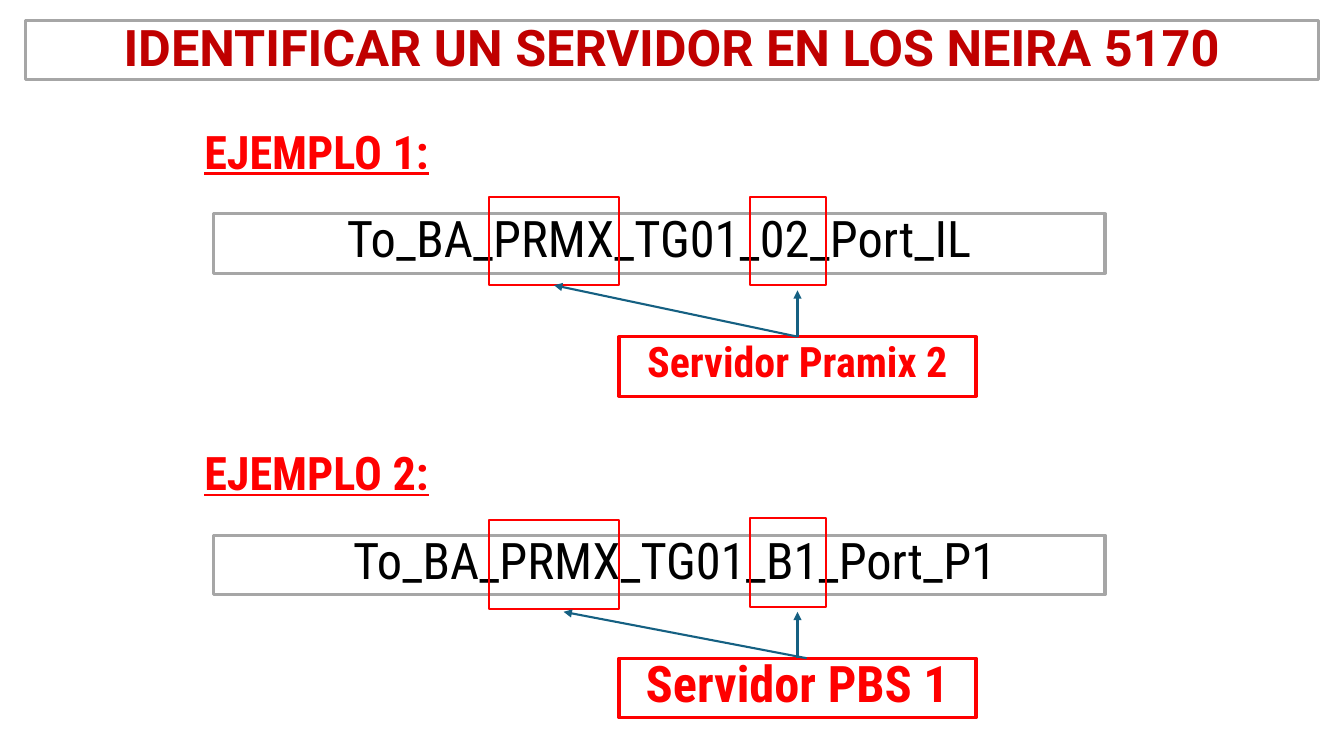
import pptx
import pptx.util
import pptx.dml.color
import pptx.enum.shapes
import pptx.enum.text
import pptx.oxml.ns
import lxml.etree

Inches = pptx.util.Inches
Pt = pptx.util.Pt
RGBColor = pptx.dml.color.RGBColor

WHITE = RGBColor(0xFF, 0xFF, 0xFF)
BLACK = RGBColor(0, 0, 0)
RED = RGBColor(0xFF, 0, 0)
DARK_RED = RGBColor(0xC0, 0, 0)
GRAY = RGBColor(0xA6, 0xA6, 0xA6)
BLUE = RGBColor(0x15, 0x60, 0x82)


def write_box(box, text, size, color, line_color=None, spacing=0.8,
              font="Roboto Condensed", bold=True):
    """Fill and outline a box and write one centred line of text in it."""
    box.fill.solid()
    box.fill.fore_color.rgb = WHITE
    if line_color is not None:
        box.line.color.rgb = line_color
        box.line.width = Pt(2.25)
    frame = box.text_frame
    frame.word_wrap = True
    frame.auto_size = pptx.enum.text.MSO_AUTO_SIZE.NONE
    frame.vertical_anchor = pptx.enum.text.MSO_ANCHOR.MIDDLE
    para = frame.paragraphs[0]
    para.text = text
    para.alignment = pptx.enum.text.PP_ALIGN.CENTER
    para.line_spacing = spacing
    para.font.name = font
    para.font.size = Pt(size)
    para.font.bold = bold
    para.font.color.rgb = color
    return para


def add_arrow(shapes, start, end):
    """Draw a blue arrow between two (x, y) points in inches."""
    arrow = shapes.add_connector(pptx.enum.shapes.MSO_CONNECTOR.STRAIGHT,
                                 *[Inches(value) for value in start + end])
    arrow.line.color.rgb = BLUE
    arrow.line.width = Pt(1.5)
    lxml.etree.SubElement(arrow.line._get_or_add_ln(),
                          pptx.oxml.ns.qn("a:tailEnd"), type="triangle")
    lxml.etree.SubElement(arrow._element.spPr, pptx.oxml.ns.qn("a:effectLst"))
    return arrow


deck = pptx.Presentation()
deck.slide_width = Inches(13.33)
deck.slide_height = Inches(7.5)
slide = deck.slides.add_slide(deck.slide_layouts[5])
shapes = slide.shapes

title = shapes.title
title.left, title.top = Inches(0.25), Inches(0.2)
title.width, title.height = Inches(12.83), Inches(0.59)
write_box(title, "IDENTIFICAR UN SERVIDOR EN LOS NEIRA 5170", 36, DARK_RED,
          GRAY, spacing=0.9, font="Roboto")

BOX_HEIGHT = 0.59
EXAMPLE_STEP = 3.19
LABEL_CENTER = 7.91
LABEL_WIDTH = 3.54

# Port name, its left inset, server label, label size and spacing,
# top of the type frame, start and end of the slanted arrow
examples = [
    ("To_BA_PRMX_TG01_02_Port_IL", 0.1, "Servidor Pramix 2", 30, 0.7,
     1.95, (LABEL_CENTER, 3.34), (5.5, 2.83)),
    ("To_BA_PRMX_TG01_B1_Port_P1", 0.41, "Servidor PBS 1", 36, 0.8,
     5.16, (8, 6.53), (5.59, 6.07)),
]

for index, (port_name, inset, server, size, spacing,
            type_top, slant_start, slant_end) in enumerate(examples):
    offset = index * EXAMPLE_STEP

    port_box = shapes.add_textbox(Inches(2.12), Inches(2.12 + offset),
                                  Inches(8.84), Inches(BOX_HEIGHT))
    write_box(port_box, port_name, 36, BLACK, GRAY, bold=False)
    port_box.text_frame.margin_left = Inches(inset)

    heading = shapes.add_textbox(Inches(1.9), Inches(1.25 + offset),
                                 Inches(2.48), Inches(BOX_HEIGHT))
    heading_para = write_box(heading, f"EJEMPLO {index + 1}:", 33, RED)
    heading_para.font.underline = True

    label_top = 3.34 + offset
    label = shapes.add_textbox(Inches(LABEL_CENTER - LABEL_WIDTH / 2),
                               Inches(label_top),
                               Inches(LABEL_WIDTH), Inches(BOX_HEIGHT))
    write_box(label, server, size, RED, RED, spacing)

    frames = []
    for left, top, width in ((4.85, type_top, 1.29),
                             (7.44, 1.95 + offset, 0.75)):
        frame_box = shapes.add_shape(pptx.enum.shapes.MSO_SHAPE.RECTANGLE,
                                     Inches(left), Inches(top),
                                     Inches(width), Inches(0.88))
        frame_box.fill.background()
        frame_box.line.color.rgb = RED
        frame_box.line.width = Pt(1.5)
        frame_box.shadow.inherit = False
        frames.append(frame_box)

    upright = add_arrow(shapes, (LABEL_CENTER, label_top),
                        (LABEL_CENTER, label_top - 0.46))
    upright.begin_connect(label, 0)
    slanted = add_arrow(shapes, slant_start, slant_end)
    if slant_start[0] == LABEL_CENTER:
        slanted.begin_connect(label, 0)
        slanted.end_connect(frames[0], 2)

deck.save("out.pptx")
